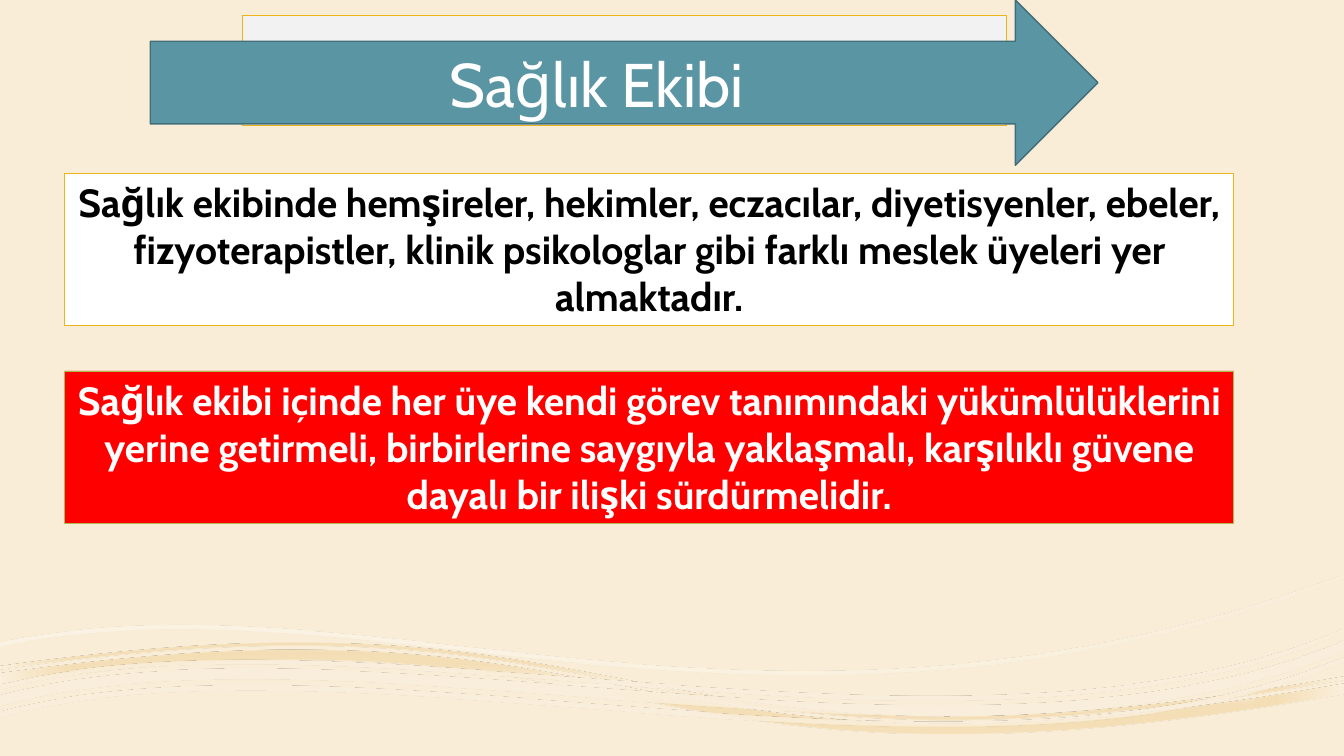
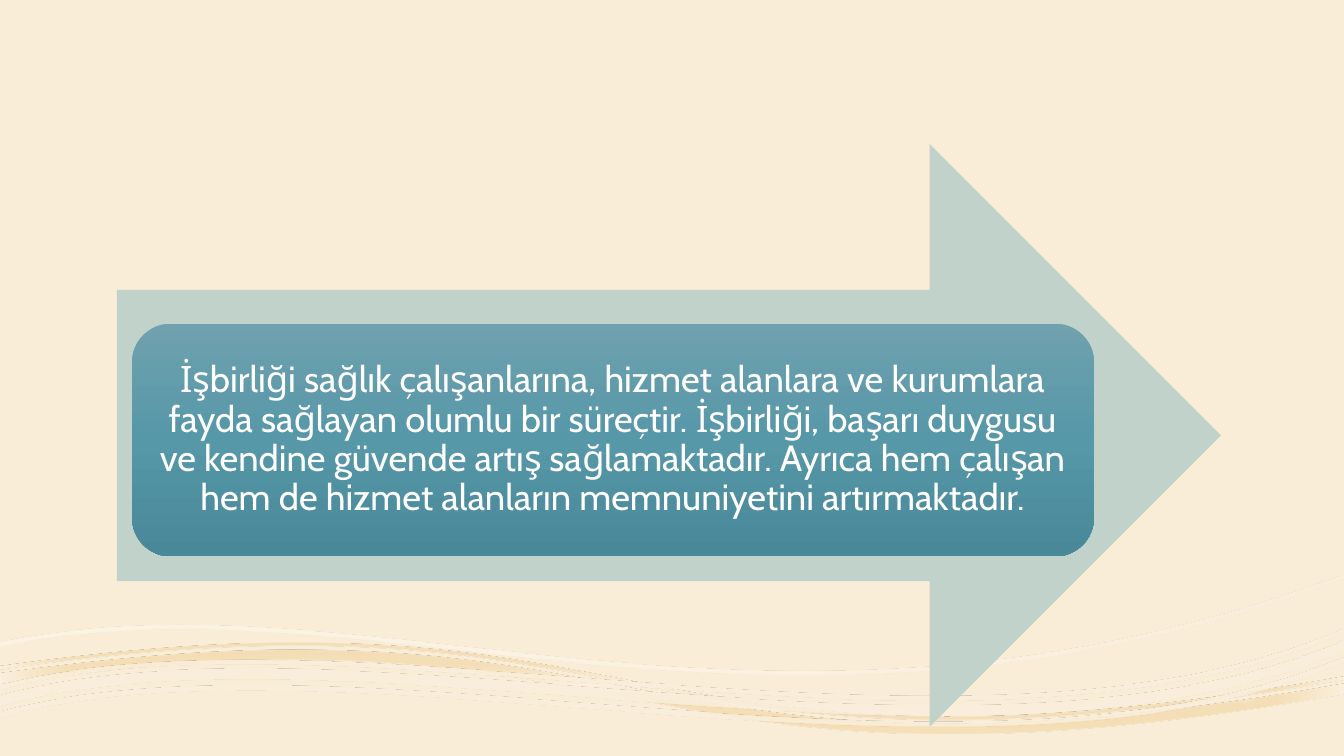
import math

import lxml.etree
import pptx
import pptx.dml.color
import pptx.enum.shapes
import pptx.enum.text
import pptx.oxml.ns
import pptx.util

RGBColor = pptx.dml.color.RGBColor
MSO_SHAPE = pptx.enum.shapes.MSO_SHAPE
MSO_ANCHOR = pptx.enum.text.MSO_ANCHOR
MSO_AUTO_SIZE = pptx.enum.text.MSO_AUTO_SIZE
qn = pptx.oxml.ns.qn

SLIDE_WIDTH = pptx.util.Inches(13.333)
SLIDE_HEIGHT = pptx.util.Inches(7.5)
FONT = "Cabin"
BLANK_LAYOUT = 6
WAVE_TILT = -3.5

WHITE = RGBColor(0xFF, 0xFF, 0xFF)
BLACK = RGBColor(0x00, 0x00, 0x00)
RED = RGBColor(0xFF, 0x00, 0x00)
CREAM = RGBColor(0xF9, 0xED, 0xD7)
PALE_CREAM = RGBColor(0xFA, 0xF1, 0xDF)
WARM_CREAM = RGBColor(0xFA, 0xEF, 0xDC)
SAND = RGBColor(0xF4, 0xDE, 0xB7)
DEEP_SAND = RGBColor(0xF4, 0xDD, 0xB3)
LIGHT_GREY = RGBColor(0xF2, 0xF2, 0xF2)
GOLD = RGBColor(0xEB, 0xB4, 0x19)
OLIVE = RGBColor(0xAC, 0xBB, 0x51)
TEAL = RGBColor(0x5A, 0x95, 0xA4)
DARK_TEAL = RGBColor(0x43, 0x6E, 0x79)
MIST = RGBColor(0xC0, 0xD2, 0xCA)
PANEL_TOP = RGBColor(0x70, 0xA1, 0xAE)
PANEL_MIDDLE = RGBColor(0x56, 0x97, 0xA8)
PANEL_BOTTOM = RGBColor(0x49, 0x88, 0x98)

TEAM_TEXT = (
    "Sağlık ekibinde hemşireler, hekimler, eczacılar, diyetisyenler, ebeler, "
    "fizyoterapistler, klinik psikologlar gibi farklı meslek üyeleri yer almaktadır."
)
DUTY_TEXT = (
    "Sağlık ekibi içinde her üye kendi görev tanımındaki yükümlülüklerini yerine "
    "getirmeli, birbirlerine saygıyla yaklaşmalı, karşılıklı güvene dayalı bir "
    "ilişki sürdürmelidir."
)
COOPERATION_TEXT = (
    "İşbirliği sağlık çalışanlarına, hizmet alanlara ve kurumlara fayda sağlayan "
    "olumlu bir süreçtir. İşbirliği, başarı duygusu ve kendine güvende artış "
    "sağlamaktadır. Ayrıca hem çalışan hem de hizmet alanların memnuniyetini "
    "artırmaktadır."
)


def area(left, top, width, height):
    """Turn percentages of the slide's size into lengths."""
    return (
        round(SLIDE_WIDTH * left / 100),
        round(SLIDE_HEIGHT * top / 100),
        round(SLIDE_WIDTH * width / 100),
        round(SLIDE_HEIGHT * height / 100),
    )


def set_gradient(shape, stops, angle=0, path=None, focus=()):
    """Fill with (position, colour, opacity) stops in percent, linear or along a path."""
    shape.fill.background()
    gradient = lxml.etree.Element(qn("a:gradFill"), rotWithShape="1")
    stop_list = lxml.etree.SubElement(gradient, qn("a:gsLst"))
    for position, color, opacity in stops:
        stop = lxml.etree.SubElement(stop_list, qn("a:gs"), pos=str(position * 1000))
        color_element = lxml.etree.SubElement(stop, qn("a:srgbClr"), val=str(color))
        if opacity < 100:
            lxml.etree.SubElement(color_element, qn("a:alpha"), val=str(opacity * 1000))
    if path:
        path_element = lxml.etree.SubElement(gradient, qn("a:path"))
        path_element.set("path", path)
        edges = {side: str(share * 1000) for side, share in zip("ltrb", focus)}
        lxml.etree.SubElement(path_element, qn("a:fillToRect"), edges)
    else:
        lxml.etree.SubElement(gradient, qn("a:lin"), ang=str(angle * 60000), scaled="0")
    properties = shape.element.spPr
    properties.replace(properties.find(qn("a:noFill")), gradient)


def set_look(shape, fill=None, line=None, line_width=0.5):
    if fill is not None:
        shape.fill.solid()
        shape.fill.fore_color.rgb = fill
    if line is None:
        shape.line.fill.background()
    else:
        shape.line.color.rgb = line
        shape.line.width = pptx.util.Pt(line_width)
    shape.shadow.inherit = False


def set_text(shape, text, size, color, bold=False, anchor=MSO_ANCHOR.MIDDLE,
             auto_size=MSO_AUTO_SIZE.NONE):
    frame = shape.text_frame
    frame.text = text
    frame.word_wrap = True
    frame.auto_size = auto_size
    frame.vertical_anchor = anchor
    paragraph = frame.paragraphs[0]
    paragraph.alignment = pptx.enum.text.PP_ALIGN.CENTER
    for run in paragraph.runs:
        run.font.name = FONT
        run.font.size = pptx.util.Pt(size)
        run.font.bold = bold
        run.font.color.rgb = color


def add_box(slide, kind, place, fill=None, line=None, line_width=0.5):
    shape = slide.shapes.add_shape(kind, *area(*place))
    set_look(shape, fill, line, line_width)
    return shape


def add_statement(slide, top, text, color, fill, line, line_width):
    box = add_box(slide, MSO_SHAPE.RECTANGLE, (4.8, top, 87, 20.13), fill, line, line_width)
    set_text(box, text, 28, color, True, MSO_ANCHOR.TOP, MSO_AUTO_SIZE.SHAPE_TO_FIT_TEXT)


def shifted(curve, distance):
    return [(x, y + distance) for x, y in curve]


def ribbon(curve, thickness):
    return [curve, shifted(curve, thickness)[::-1]]


def add_path_step(path, tag, points=()):
    step = lxml.etree.SubElement(path, qn(tag))
    for x, y in points:
        lxml.etree.SubElement(step, qn("a:pt"), x=str(x), y=str(y))


def add_wave(slide, frame, outlines):
    """Draw closed outlines, each a chain of cubic curves, in a tilted frame.

    The frame and the points are in inches; the points are where they show
    on the slide, so the tilt is taken out of them first.
    """
    left, top, width, height = frame
    corners = [(pptx.util.Inches(x), pptx.util.Inches(y))
               for x, y in ((left, top), (left + width, top + height))]
    builder = slide.shapes.build_freeform(*corners[0], scale=1.0)
    builder.add_line_segments(corners[1:], close=True)
    wave = builder.convert_to_shape()
    cosine, sine = math.cos(math.radians(WAVE_TILT)), math.sin(math.radians(WAVE_TILT))

    def local(point):
        x, y = point[0] - left - width / 2, point[1] - top - height / 2
        return (pptx.util.Inches(width / 2 + x * cosine + y * sine),
                pptx.util.Inches(height / 2 - x * sine + y * cosine))

    path = wave.element.spPr.find(".//" + qn("a:path"))
    for step in list(path):
        path.remove(step)
    for outline in outlines:
        end = None
        for curve in outline:
            if end is None:
                add_path_step(path, "a:moveTo", [local(curve[0])])
            elif end != curve[0]:
                add_path_step(path, "a:lnTo", [local(curve[0])])
            add_path_step(path, "a:cubicBezTo", [local(point) for point in curve[1:]])
            end = curve[-1]
        add_path_step(path, "a:close")
    wave.rotation = WAVE_TILT
    set_look(wave)
    return wave


def add_sand_wave(slide):
    crest = [(0, 6.68), (1.24, 6.51), (2.22, 6.44), (3.06, 6.45)]
    slope = [(3.06, 6.45), (6.7, 6.47), (7.38, 7.82), (13.33, 6.78)]
    base = [(13.33, 6.88), (6.02, 8.16), (6.67, 5.83), (0, 6.78)]
    upper = [shifted(crest, -0.07), shifted(slope, -0.07), shifted(base, -0.14)]
    wave = add_wave(slide, (0.01, 6.12, 13.31, 1.35), [[crest, slope, base], upper])
    stops = [(0, PALE_CREAM, 90), (18, SAND, 100), (37, DEEP_SAND, 90), (100, PALE_CREAM, 100)]
    set_gradient(wave, stops, path="shape", focus=(50, 50, 50, 50))
    return wave


def add_light_wave(slide):
    curve = [(13.33, 5.7), (7.54, 7.84), (3.73, 5.59), (0, 6.37)]
    wave = add_wave(slide, (0.03, 5.88, 13.35, 1.71), [ribbon(curve, 0.04)])
    set_gradient(wave, [(36, WHITE, 30), (100, CREAM, 48)], angle=45)
    return wave


def add_triple_wave(slide):
    low = [(13.33, 6.52), (9.55, 8.1), (3.49, 6.12), (0, 7.06)]
    high = [(13.33, 6.24), (9.58, 7.86), (3.51, 5.89), (0, 6.8)]
    outlines = [ribbon(low, 0.05), ribbon(shifted(low, -0.16), 0.1), ribbon(high, 0.04)]
    wave = add_wave(slide, (-0.01, 6.25, 13.36, 1.15), outlines)
    stops = [(36, WHITE, 47), (100, WARM_CREAM, 82)]
    set_gradient(wave, stops, path="rect", focus=(100, 100, 0, 0))
    return wave


def style_master(master, slide):
    """Set the shared background; the waves are drawn on the slide, then moved."""
    master.background.fill.solid()
    master.background.fill.fore_color.rgb = CREAM
    for index, add in enumerate((add_sand_wave, add_light_wave, add_triple_wave)):
        wave = add(slide)
        wave.element.nvSpPr.cNvPr.set("id", str(100 + index))
        master.shapes.element.insert(2 + index, wave.element)


def fill_team_slide(slide):
    add_box(slide, MSO_SHAPE.RECTANGLE, (18, 2, 56.86, 14.53), LIGHT_GREY, GOLD)
    add_statement(slide, 22.93, TEAM_TEXT, BLACK, WHITE, GOLD, 1)
    add_statement(slide, 49.07, DUTY_TEXT, WHITE, RED, OLIVE, 0.5)
    title_arrow = add_box(slide, MSO_SHAPE.RIGHT_ARROW, (11.18, 0, 70.52, 21.87),
                          TEAL, DARK_TEAL, 1)
    set_text(title_arrow, "Sağlık Ekibi ", 44, WHITE)


def fill_cooperation_slide(slide):
    add_box(slide, MSO_SHAPE.RIGHT_ARROW, (8.7, 19.07, 82.15, 77.07), MIST)
    panel = add_box(slide, MSO_SHAPE.ROUNDED_RECTANGLE, (9.83, 42.8, 71.57, 30.8))
    stops = [(0, PANEL_TOP, 100), (50, PANEL_MIDDLE, 100), (100, PANEL_BOTTOM, 100)]
    set_gradient(panel, stops, angle=90)
    set_text(panel, COOPERATION_TEXT, 26, WHITE)
    frame = panel.text_frame
    frame.margin_left = frame.margin_right = pptx.util.Inches(0.11)
    frame.margin_top = frame.margin_bottom = pptx.util.Inches(0.11)
    frame.paragraphs[0].line_spacing = 0.9


def main():
    presentation = pptx.Presentation()
    presentation.slide_width = SLIDE_WIDTH
    presentation.slide_height = SLIDE_HEIGHT
    layout = presentation.slide_layouts[BLANK_LAYOUT]
    team_slide = presentation.slides.add_slide(layout)
    cooperation_slide = presentation.slides.add_slide(layout)
    style_master(presentation.slide_master, team_slide)
    fill_team_slide(team_slide)
    fill_cooperation_slide(cooperation_slide)
    presentation.save("out.pptx")


if __name__ == "__main__":
    main()
